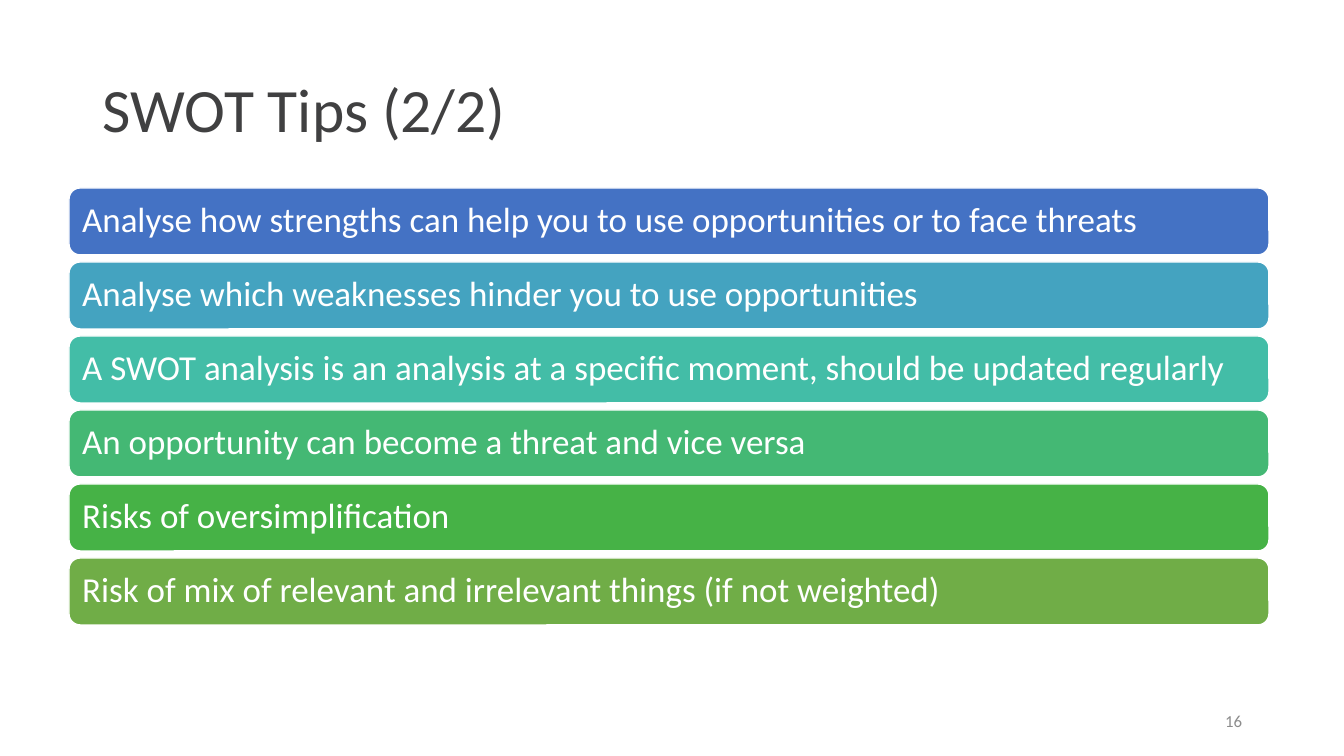
from dataclasses import dataclass

from pptx import Presentation
from pptx import util as u
from pptx.dml.color import RGBColor
from pptx.enum import shapes, text

EMU_PER_PX = 914400 / 100.8


@dataclass(frozen=True)
class Theme:
    font: str = "Calibri"
    title_size: int = 44
    tip_size: int = 25
    number_size: int = 12
    title_color: str = "404041"
    number_color: str = "8C8C8C"
    white: str = "FFFFFF"


THEME = Theme()

TIPS = [
    ("Analyse how strengths can help you to use opportunities or to face threats", "4472C4"),
    ("Analyse which weaknesses hinder you to use opportunities", "44A3C0"),
    ("A SWOT analysis is an analysis at a specific moment, should be updated regularly", "43BDA7"),
    ("An opportunity can become a threat and vice versa", "44B874"),
    ("Risks of oversimplification", "46B246"),
    ("Risk of mix of relevant and irrelevant things (if not weighted)", "70AD47"),
]

BAR_LEFT, BAR_TOP, BAR_WIDTH, BAR_HEIGHT = 69, 188, 1200, 67
BAR_PITCH = 74
BAR_INSET = 10


def px(length):
    return u.Emu(round(length * EMU_PER_PX))


def write(box, words, size, color, align=text.PP_ALIGN.LEFT, spacing=1.0):
    frame = box.text_frame
    frame.word_wrap = True
    frame.vertical_anchor = text.MSO_ANCHOR.MIDDLE
    para = frame.paragraphs[0]
    para.alignment = align
    para.line_spacing = spacing
    span = para.add_run()
    span.text = words
    span.font.name = THEME.font
    span.font.size = u.Pt(size)
    span.font.color.rgb = RGBColor.from_string(color)


def add_label(page, place, words, size, color, **layout):
    box = page.shapes.add_textbox(*map(px, place))
    write(box, words, size, color, **layout)


def add_tip_bar(page, row, words, fill):
    place = (BAR_LEFT, BAR_TOP + row * BAR_PITCH, BAR_WIDTH, BAR_HEIGHT)
    bar = page.shapes.add_shape(shapes.MSO_SHAPE.ROUNDED_RECTANGLE, *map(px, place))
    bar.shadow.inherit = False
    bar.fill.solid()
    bar.fill.fore_color.rgb = RGBColor.from_string(fill)
    bar.line.color.rgb = RGBColor.from_string(THEME.white)
    bar.line.width = u.Pt(1)
    frame = bar.text_frame
    frame.margin_left = frame.margin_right = px(BAR_INSET)
    frame.margin_top = frame.margin_bottom = px(BAR_INSET)
    write(bar, words, THEME.tip_size, THEME.white, spacing=0.9)


def main():
    deck = Presentation()
    deck.slide_width, deck.slide_height = px(1344), px(756)
    page = deck.slides.add_slide(deck.slide_layouts[6])
    add_label(page, (93, 40, 1159, 146), "SWOT Tips (2/2)",
              THEME.title_size, THEME.title_color, spacing=0.9)
    for row, (words, fill) in enumerate(TIPS):
        add_tip_bar(page, row, words, fill)
    add_label(page, (950, 701, 302, 40), "16",
              THEME.number_size, THEME.number_color, align=text.PP_ALIGN.RIGHT)
    deck.save("out.pptx")


if __name__ == "__main__":
    main()
